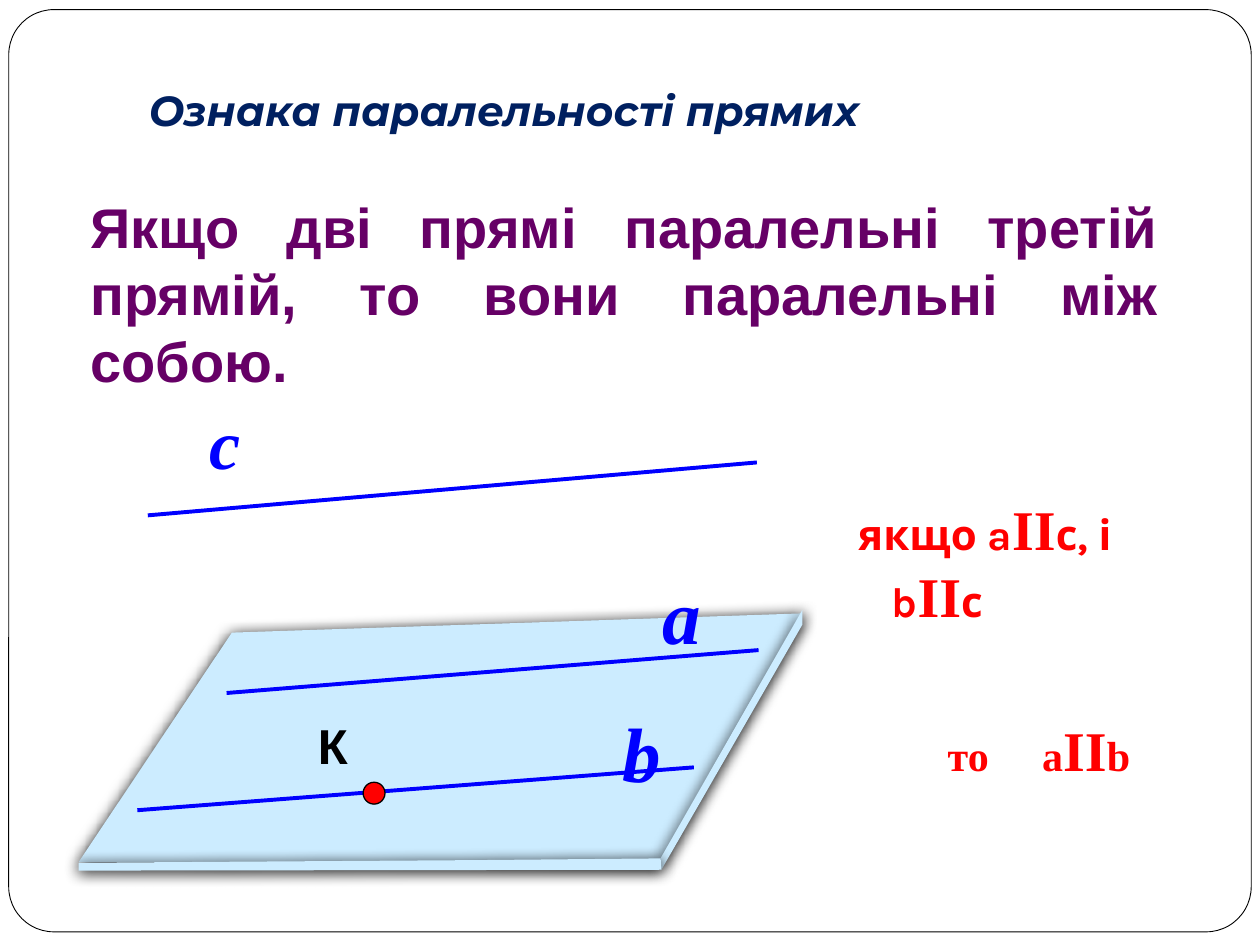
import pptx
import pptx.util
import pptx.dml.color
import pptx.oxml
import pptx.oxml.ns
from pptx.enum.shapes import MSO_CONNECTOR, MSO_SHAPE
from pptx.enum.text import MSO_ANCHOR, PP_ALIGN

Pt = pptx.util.Pt
A_NS = pptx.oxml.ns.nsdecls("a")
BLUE, RED, NAVY, PURPLE, ICE = "0000FF", "FF0000", "002060", "660066", "CCECFF"
SERIF = "Times New Roman"


def color(hex_code):
    return pptx.dml.color.RGBColor.from_string(hex_code)


class Board:
    """Holds the current slide and the shared text style."""

    base = {"name": "Arial", "size": Pt(24), "bold": True, "italic": False}

    def __init__(self, prs):
        self.s = prs.slides.add_slide(prs.slide_layouts[6])

    def paint(self, sp, fill, line=None, width=0.75):
        sp.shadow.inherit = False
        sp.fill.solid()
        sp.fill.fore_color.rgb = color(fill)
        if line:
            sp.line.color.rgb = color(line)
            sp.line.width = Pt(width)
        else:
            sp.line.fill.background()

    def shape(self, kind, box, fill, line, width):
        sp = self.s.shapes.add_shape(kind, *map(Pt, box))
        self.paint(sp, fill, line, width)
        return sp

    def slab_part(self, points):
        """Draw a closed polygon with a soft dark shadow below it."""
        pts = [(Pt(x), Pt(y)) for x, y in points]
        builder = self.s.shapes.build_freeform(*pts[0], scale=1.0)
        builder.add_line_segments(pts[1:], close=True)
        sp = builder.convert_to_shape()
        self.paint(sp, ICE)
        effects = sp._element.spPr.find(pptx.oxml.ns.qn("a:effectLst"))
        effects.append(pptx.oxml.parse_xml(
            f'<a:outerShdw {A_NS} blurRad="{Pt(8.5)}" dist="{Pt(1)}" dir="5400000" '
            'algn="t" rotWithShape="0"><a:srgbClr val="000000"/></a:outerShdw>'))

    def line(self, x1, y1, x2, y2):
        c = self.s.shapes.add_connector(
            MSO_CONNECTOR.STRAIGHT, Pt(x1), Pt(y1), Pt(x2), Pt(y2))
        c.line.color.rgb = color(BLUE)
        c.line.width = Pt(2.25)
        c._element.spPr.append(pptx.oxml.parse_xml(f"<a:effectLst {A_NS}/>"))

    def text(self, box, runs, hex_code, align=PP_ALIGN.LEFT,
             anchor=MSO_ANCHOR.TOP, wrap=True, **style):
        """Add one paragraph; each run is (text, font values that differ)."""
        tf = self.s.shapes.add_textbox(*map(Pt, box)).text_frame
        tf.word_wrap, tf.vertical_anchor = wrap, anchor
        p = tf.paragraphs[0]
        p.alignment = align
        for words, extra in runs:
            r = p.add_run()
            r.text = words
            for key, value in {**self.base, **style, **extra}.items():
                setattr(r.font, key, value)
            r.font.color.rgb = color(hex_code)
        return p


def main():
    prs = pptx.Presentation()
    prs.slide_width, prs.slide_height = Pt(720), Pt(540)
    board = Board(prs)

    frame = board.shape(MSO_SHAPE.ROUNDED_RECTANGLE, (5, 5.5, 710, 527),
                        "FFFFFF", "000000", 0.5)
    frame.adjustments[0] = 0.049

    top_face = [(45, 492.5), (132.5, 361.5), (458.5, 350.5), (377.5, 492.5)]
    right_edge = [(458.5, 348.5), (458.5, 357), (378, 497), (377.5, 490.5)]
    front_edge = [(45, 493), (271, 491.5), (377.5, 490.5), (378, 497), (45, 497.5)]
    for part in (top_face, right_edge, front_edge):
        board.slab_part(part)

    board.line(396.5, 438.5, 78.5, 463)
    board.line(433.5, 371.5, 129.5, 396)
    board.line(432.5, 264.25, 84.5, 294.5)

    for name, x, y, size in (("a", 371.5, 320.5, 44), ("b", 348.5, 399.5, 44),
                             ("с", 112.5, 224.5, 40)):
        board.text((x, y, 37.5, 60), [(name, {})], BLUE,
                   name=SERIF, size=Pt(size), italic=True)

    board.text((78, 44.5, 568, 36), [("Ознака паралельності прямих", {})], NAVY,
               name="Montserrat", italic=True)
    board.text((44.5, 106.5, 624.5, 124),
               [("Якщо дві прямі паралельні третій прямій, "
                 "то вони паралельні між собою.", {})],
               PURPLE, align=PP_ALIGN.JUSTIFY, size=Pt(32))

    parallel = ("II", {"name": SERIF, "size": Pt(32)})
    p = board.text((466.5, 278.5, 205, 85),
                   [("якщо a", {}), parallel, ("с, і b", {}), parallel, ("с", {})],
                   RED, anchor=MSO_ANCHOR.MIDDLE, name="Karla")
    pPr = p._p.get_or_add_pPr()
    pPr.set("marL", str(Pt(36)))
    pPr.set("indent", str(Pt(-19)))

    board.shape(MSO_SHAPE.OVAL, (207.5, 447, 12.5, 12.5), RED, "000000", 0.75)
    board.text((174.5, 405.5, 31.5, 41), [("К", {})], "000000",
               wrap=False, size=Pt(28))

    p = board.text((534.5, 405.5, 180, 46), [("то\ta", {}), parallel, ("b", {})],
                   RED, name=SERIF)
    p._p.get_or_add_pPr().append(pptx.oxml.parse_xml(
        f'<a:tabLst {A_NS}><a:tab pos="{Pt(54)}" algn="l"/></a:tabLst>'))

    prs.save("out.pptx")


if __name__ == "__main__":
    main()
